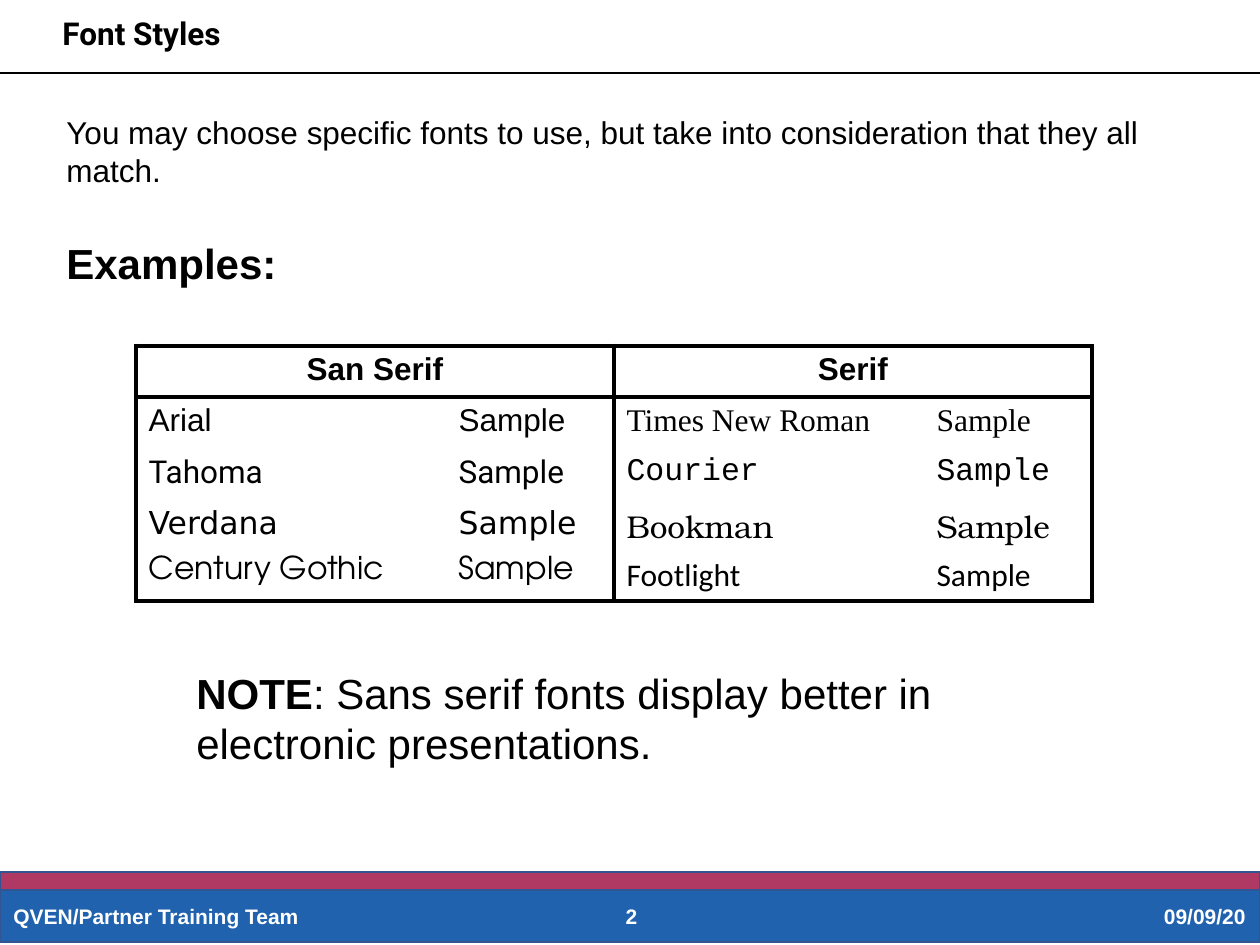
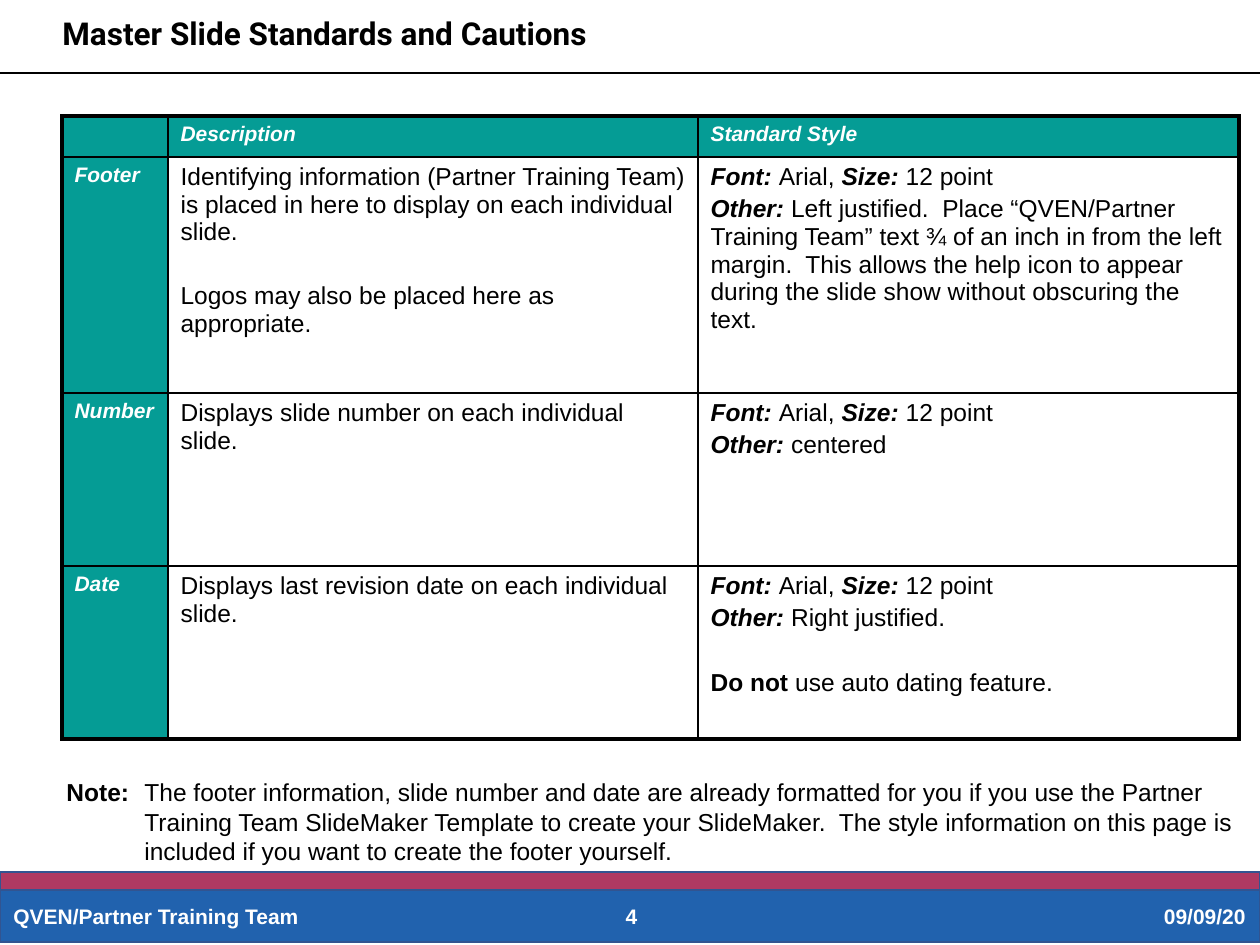
from collections import namedtuple
from dataclasses import dataclass

from lxml import etree
from pptx import Presentation
from pptx import util as u
from pptx.dml.color import RGBColor
from pptx.enum import shapes, text
from pptx.oxml import ns

Box = namedtuple("Box", "left top width height")
Run = namedtuple("Run", "text bold italic", defaults=(False, False))


@dataclass(frozen=True)
class Theme:
    black: str = "000000"
    white: str = "FFFFFF"
    blue: str = "2162AE"
    red: str = "AF3962"
    band_line: str = "325491"
    teal: str = "059C95"
    body_font: str = "Arial"
    title_font: str = "Roboto"
    small: int = 12
    note: int = 14
    body: int = 18
    large: int = 24


THEME = Theme()
PAGE = Box(0, 0, 1260, 945)
TEAM = "QVEN/Partner Training Team"
CENTER, RIGHT = text.PP_ALIGN.CENTER, text.PP_ALIGN.RIGHT


# Shared helpers
def px(length):
    return u.Emu(round(length * 914400 / 126))


def place(box):
    return [px(length) for length in box]


def color(code):
    return RGBColor.from_string(code)


def write(paragraph, runs, size, code=THEME.black, font=THEME.body_font, align=None):
    """Fill a paragraph with runs that share a size, colour and font."""
    paragraph.alignment = align
    for part in runs:
        run = paragraph.add_run()
        run.text = part.text
        run.font.name, run.font.size = font, u.Pt(size)
        run.font.bold, run.font.italic = part.bold, part.italic
        run.font.color.rgb = color(code)


def add_text(slide, box, runs, size, anchor=text.MSO_ANCHOR.TOP, **style):
    frame = slide.shapes.add_textbox(*place(box)).text_frame
    frame.word_wrap = True
    frame.vertical_anchor = anchor
    write(frame.paragraphs[0], runs, size, **style)
    return frame


def add_band(slide, box, code):
    band = slide.shapes.add_shape(shapes.MSO_SHAPE.RECTANGLE, *place(box))
    band.shadow.inherit = False
    band.fill.solid()
    band.fill.fore_color.rgb = color(code)
    band.line.color.rgb = color(THEME.band_line)
    band.line.width = u.Pt(1)


def set_border(cell, side, points):
    """Draw one side of a cell; a width of 0 leaves it without a line."""
    properties = cell._tc.get_or_add_tcPr()
    line = etree.SubElement(properties, ns.qn("a:" + side), w=str(u.Pt(points)))
    if points:
        fill = etree.SubElement(line, ns.qn("a:solidFill"))
        etree.SubElement(fill, ns.qn("a:srgbClr"), val=THEME.black)
    else:
        etree.SubElement(line, ns.qn("a:noFill"))


def fill_cell(cell, code):
    cell.fill.solid()
    cell.fill.fore_color.rgb = color(code)


def add_grid(slide, left, top, widths, heights, vertical, horizontal, header_span=1):
    """Add a white table whose grid lines have the given widths in points."""
    box = Box(left, top, sum(widths), sum(heights))
    table = slide.shapes.add_table(len(heights), len(widths), *place(box)).table
    table.first_row = table.horz_banding = False
    for column, width in zip(table.columns, widths):
        column.width = px(width)
    for r, height in enumerate(heights):
        table.rows[r].height = px(height)
        span = 1 if r else header_span
        for c in range(len(widths)):
            cell = table.cell(r, c)
            start = c - c % span
            sides = {"lnL": vertical[start], "lnR": vertical[start + span],
                     "lnT": horizontal[r], "lnB": horizontal[r + 1]}
            for side, points in sides.items():
                set_border(cell, side, points)
            fill_cell(cell, THEME.white)
    return table


# Title, rule and footer of every slide
def add_header(slide, box, title, title_width):
    add_text(slide, Box(box.left + 50, box.top + 8, title_width, 63),
             [Run(title, True)], THEME.body, font=THEME.title_font)
    y = px(box.top + 73)
    rule = slide.shapes.add_connector(shapes.MSO_CONNECTOR.STRAIGHT,
                                      px(box.left), y, px(box.left + box.width), y)
    rule.line.color.rgb = color(THEME.black)
    rule.line.width = u.Pt(0.75)
    etree.SubElement(rule._element.spPr, ns.qn("a:effectLst"))


def add_footer(slide, box, number):
    add_band(slide, Box(box.left, box.top + 7, box.width, 63), THEME.blue)
    add_band(slide, Box(box.left, box.top, box.width, 18), THEME.red)
    for label, left, width, align in ((TEAM, 1, 426, None),
                                      (str(number), 573, 117, CENTER),
                                      ("09/09/20", 974, 284, RIGHT)):
        add_text(slide, Box(box.left + left, box.top + 19, width, 50),
                 [Run(label, True)], THEME.small, text.MSO_ANCHOR.MIDDLE,
                 code=THEME.white, align=align)


def add_slide(presentation, title, title_width, number):
    slide = presentation.slides.add_slide(presentation.slide_layouts[6])
    add_header(slide, PAGE, title, title_width)
    add_footer(slide, Box(0, 872, PAGE.width, 70), number)
    return slide


# Font styles slide
FONT_GROUPS = {
    "San Serif": [("Arial", "Arial"), ("Tahoma", "Roboto"), ("Verdana", "DejaVu Sans"),
                  ("Century Gothic", "TeX Gyre Adventor")],
    "Serif": [("Times New Roman", "Times New Roman"), ("Courier", "Courier New"),
              ("Bookman", "TeX Gyre Bonum"), ("Footlight", "Calibri")],
}


def add_font_table(slide, left, top):
    table = add_grid(slide, left, top, [310, 168] * 2, [51] * 5, vertical=[3, 0, 3, 0, 3],
                     horizontal=[3, 3, 0, 0, 0, 3], header_span=2)
    for group, (heading, fonts) in enumerate(FONT_GROUPS.items()):
        first = 2 * group
        header = table.cell(0, first)
        header.merge(table.cell(0, first + 1))
        write(header.text_frame.paragraphs[0], [Run(heading, True)], THEME.body, align=CENTER)
        for row, (name, font) in enumerate(fonts, start=1):
            for column, label in enumerate((name, "Sample"), start=first):
                write(table.cell(row, column).text_frame.paragraphs[0],
                      [Run(label)], THEME.body, font=font)


def build_font_styles(presentation):
    slide = add_slide(presentation, "Font Styles", 261, 2)
    intro = add_text(slide, Box(54, 107, 1133, 190), [Run(
        "You may choose specific fonts to use, but take into consideration that they all match.")],
        THEME.body)
    examples = intro.add_paragraph()
    examples.space_before = u.Pt(28)
    write(examples, [Run("Examples:", True)], THEME.large)
    add_font_table(slide, 136, 346)
    add_text(slide, Box(184, 661, 856, 115), [
        Run("NOTE", True),
        Run(": Sans serif fonts display better in electronic presentations.")], THEME.large)


# Standards slide
def style_lines(other):
    return [[Run("Font: ", True, True), Run("Arial, "),
             Run("Size:", True, True), Run(" 12 point")],
            [Run("Other:", True, True), Run(" " + other)]]


# Each row: name, description paragraphs, style paragraphs
STANDARDS = [
    ("Footer",
     [[Run("Identifying information (Partner Training Team) is placed in here to display "
           "on each individual slide.")],
      [Run("Logos may also be placed here as appropriate.")]],
     style_lines(f"Left justified.  Place “{TEAM}” text ¾ of an inch in "
                 "from the left margin.  This allows the help icon to appear during the "
                 "slide show without obscuring the text.")),
    ("Number",
     [[Run("Displays slide number on each individual slide.")]],
     style_lines("centered")),
    ("Date",
     [[Run("Displays last revision date on each individual slide.")]],
     style_lines("Right justified.")
     + [[Run("Do not", True), Run(" use auto dating feature.")]]),
]
LINE_GAP, SECTION_GAP = 2.8, 21


def write_heading(cell, label):
    fill_cell(cell, THEME.teal)
    paragraph = cell.text_frame.paragraphs[0]
    if label:
        write(paragraph, [Run(label, True, True)], THEME.small, THEME.white)
    else:
        paragraph._p.get_or_add_endParaRPr().set("sz", str(THEME.small * 100))


def write_lines(cell, lines, gaps):
    frame = cell.text_frame
    for index, (runs, gap) in enumerate(zip(lines, gaps)):
        paragraph = frame.add_paragraph() if index else frame.paragraphs[0]
        paragraph.space_before = u.Pt(gap)
        write(paragraph, runs, THEME.note)


def add_standards_table(slide, left, top):
    table = add_grid(slide, left, top, [106, 530, 541], [41, 236, 173, 173],
                     vertical=[2.25, 1, 1, 2.25], horizontal=[2.25, 1, 1, 1, 2.25])
    for column, label in enumerate(("", "Description", "Standard Style")):
        write_heading(table.cell(0, column), label)
    for row, (name, description, style) in enumerate(STANDARDS, start=1):
        write_heading(table.cell(row, 0), name)
        write_lines(table.cell(row, 1), description, (0, SECTION_GAP))
        write_lines(table.cell(row, 2), style, (0, LINE_GAP, SECTION_GAP))


def build_standards(presentation):
    slide = add_slide(presentation, "Master Slide Standards and Cautions", 800, 4)
    add_standards_table(slide, 62, 116)
    note = add_text(slide, Box(54, 771, 1206, 102), [
        Run("Note:", True),
        Run("\tThe footer information, slide number and date are already formatted for you if "
            "you use the Partner Training Team SlideMaker Template to create your SlideMaker.  "
            "The style information on this page is included if you want to create the footer "
            "yourself.")], THEME.note)
    properties = note.paragraphs[0]._p.get_or_add_pPr()
    properties.set("marL", str(px(78)))
    properties.set("indent", str(px(-78)))


def main():
    presentation = Presentation()
    presentation.slide_width, presentation.slide_height = px(PAGE.width), px(PAGE.height)
    build_font_styles(presentation)
    build_standards(presentation)
    presentation.save("out.pptx")


if __name__ == "__main__":
    main()
